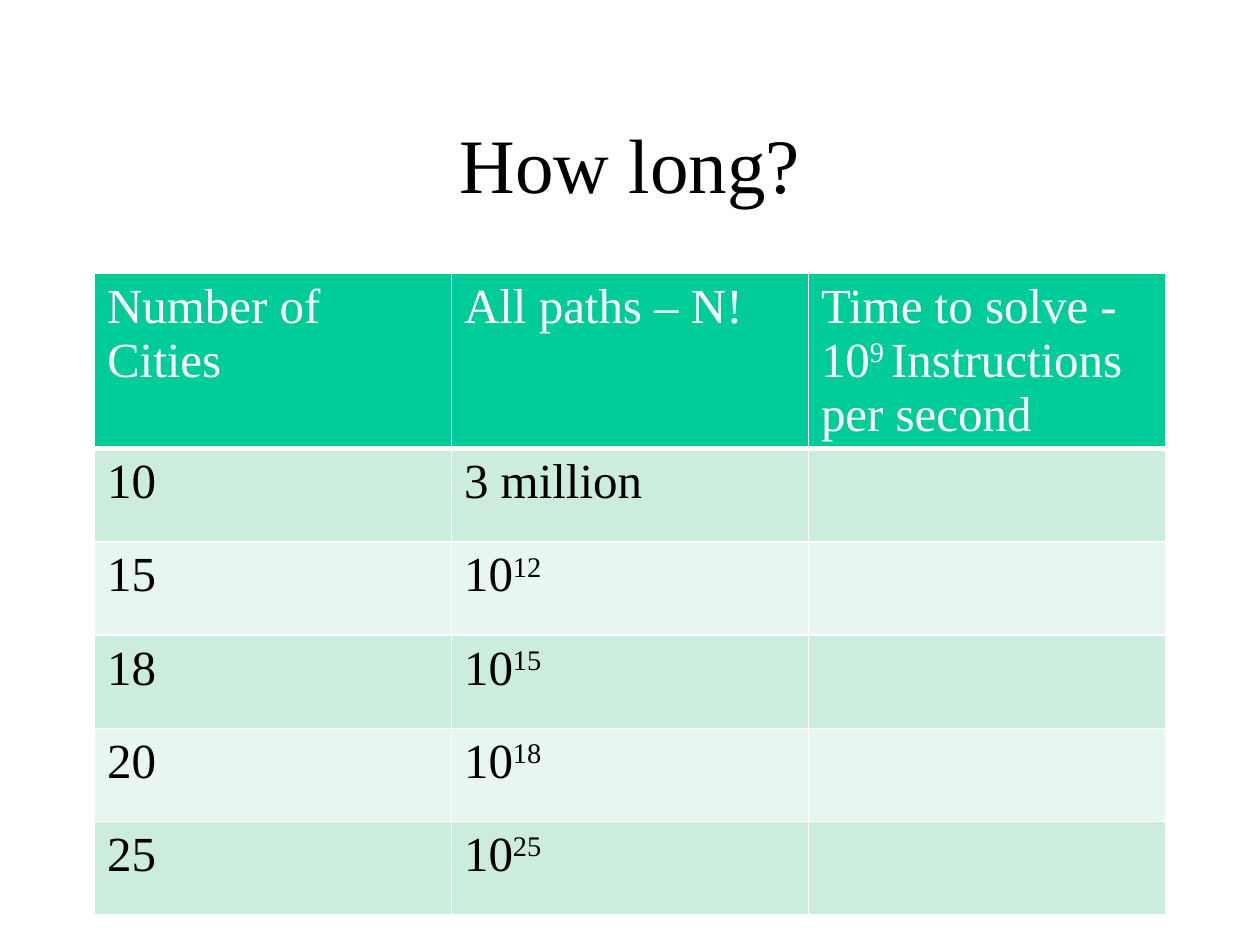
"""Build the slide that compares travelling-salesman path counts."""
from lxml.etree import SubElement
from pptx import Presentation
from pptx.dml.color import RGBColor as Color
from pptx.enum.text import MSO_ANCHOR as Anchor, PP_ALIGN as Align
from pptx.oxml.ns import qn
from pptx.util import Inches, Pt

THEME = {
    "font": "Times New Roman",
    "title_size": 44,
    "table_size": 28,
    "text": "000000",
    "header_text": "FFFFFF",
    "header_fill": "00CC99",
    "bands": ("CCECDE", "E7F6EF"),
    "border": "FFFFFF",
    "superscript": 30000,
}

TITLE = "How long?"
HEADERS = [
    [[("Number of Cities", False)]],
    [[("All paths – N!", False)]],
    [
        [("Time to solve -", False)],
        [("10", False), ("9 ", True), ("Instructions per second", False)],
    ],
]
PATH_COUNTS = [
    ("10", "3 million", ""),
    ("15", "10", "12"),
    ("18", "10", "15"),
    ("20", "10", "18"),
    ("25", "10", "25"),
]

LEFT, WIDTH = 0.75, 8.5
TITLE_TOP, TITLE_HEIGHT = 0.67, 1.25
TABLE_TOP, ROW_HEIGHT = 2.17, 0.74


def add_run(paragraph, text, size, color, raised=False):
    run = paragraph.add_run()
    run.text = text
    run.font.name = THEME["font"]
    run.font.size = Pt(size)
    run.font.color.rgb = Color.from_string(color)
    if raised:
        run.font._element.set("baseline", str(THEME["superscript"]))


def add_borders(cell, bottom_width):
    properties = cell._tc.get_or_add_tcPr()
    for side, width in (("L", 1), ("R", 1), ("T", 1), ("B", bottom_width)):
        line = SubElement(properties, qn(f"a:ln{side}"), w=str(Pt(width)))
        fill = SubElement(line, qn("a:solidFill"))
        SubElement(fill, qn("a:srgbClr"), val=THEME["border"])


def fill_cell(cell, paragraphs, text_color, fill_color, bottom_width):
    add_borders(cell, bottom_width)
    cell.fill.solid()
    cell.fill.fore_color.rgb = Color.from_string(fill_color)
    frame = cell.text_frame
    for index, runs in enumerate(paragraphs):
        paragraph = frame.add_paragraph() if index else frame.paragraphs[0]
        for text, raised in runs:
            add_run(paragraph, text, THEME["table_size"], text_color, raised)


def add_title(slide):
    title = slide.shapes.title
    title.left, title.top = Inches(LEFT), Inches(TITLE_TOP)
    title.width, title.height = Inches(WIDTH), Inches(TITLE_HEIGHT)
    title.text_frame.vertical_anchor = Anchor.MIDDLE
    paragraph = title.text_frame.paragraphs[0]
    paragraph.alignment = Align.CENTER
    add_run(paragraph, TITLE, THEME["title_size"], THEME["text"])


def add_path_table(slide):
    row_count = len(PATH_COUNTS) + 1
    table = slide.shapes.add_table(
        row_count, len(HEADERS), Inches(LEFT), Inches(TABLE_TOP),
        Inches(WIDTH), Inches(ROW_HEIGHT * row_count),
    ).table
    for column, paragraphs in enumerate(HEADERS):
        fill_cell(table.cell(0, column), paragraphs,
                  THEME["header_text"], THEME["header_fill"], 3)
    for row, (cities, paths, exponent) in enumerate(PATH_COUNTS, start=1):
        path_runs = [(paths, False)]
        if exponent:
            path_runs.append((exponent, True))
        band = THEME["bands"][(row - 1) % 2]
        for column, paragraphs in enumerate(([[(cities, False)]], [path_runs], [])):
            fill_cell(table.cell(row, column), paragraphs, THEME["text"], band, 1)


def main():
    presentation = Presentation()
    presentation.slide_width, presentation.slide_height = Inches(10), Inches(7.5)
    slide = presentation.slides.add_slide(presentation.slide_layouts[5])
    add_title(slide)
    add_path_table(slide)
    presentation.save("out.pptx")


if __name__ == "__main__":
    main()
